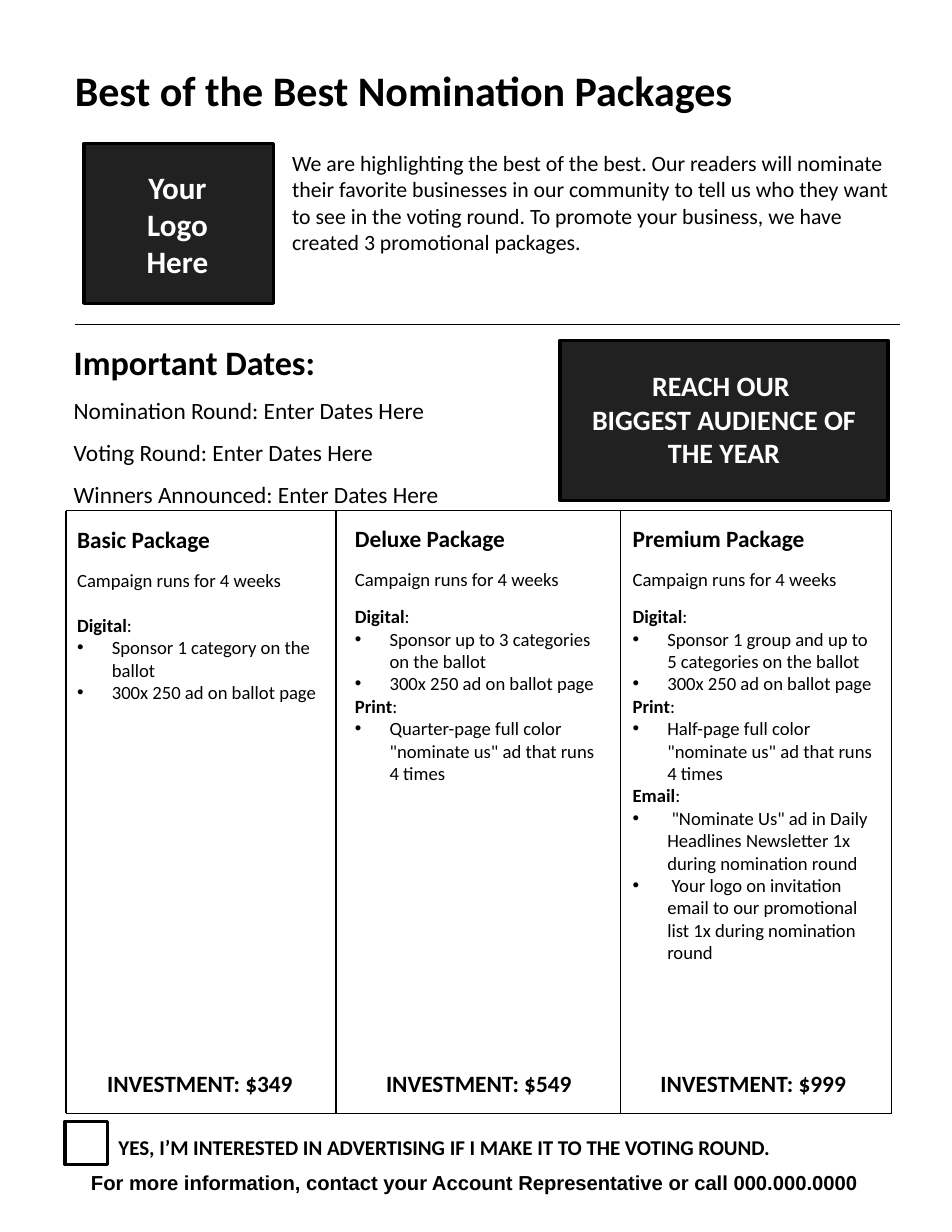
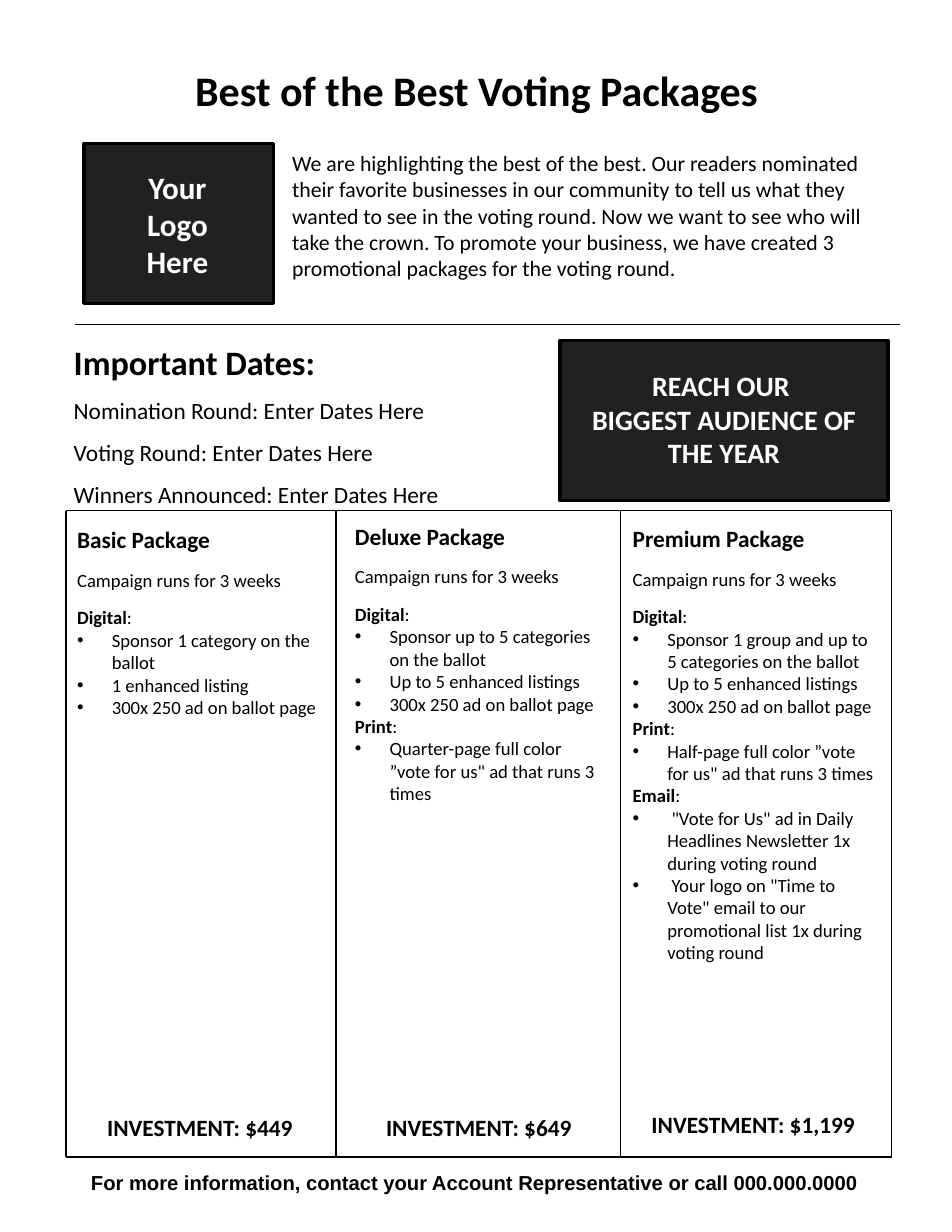
from dataclasses import dataclass

from lxml.etree import SubElement
from pptx import Presentation
from pptx.dml.color import RGBColor
from pptx.enum.shapes import MSO_CONNECTOR, MSO_SHAPE
from pptx.enum.text import MSO_ANCHOR, PP_ALIGN
from pptx.oxml.ns import qn
from pptx.util import Inches, Pt

BLACK, WHITE, CHARCOAL = "000000", "FFFFFF", "212121"
BODY_FONT, FOOTER_FONT = "Calibri", "Arial"
INSET = 0.1
BULLET_INDENT = 0.31
GRID_TOP, GRID_LEFT, GRID_RIGHT = 4.56, 0.59, 7.96
COLUMN_EDGES = (GRID_LEFT, 3, 5.54, GRID_RIGHT)
PACKAGE_STEP, PACKAGE_WIDTH = 2.48, 2.41
PRICE_SPANS = ((0.56, 2.45), (3, 2.55), (5.52, 2.41))
DATES = ("Nomination Round: Enter Dates Here",
         "Voting Round: Enter Dates Here",
         "Winners Announced: Enter Dates Here")


@dataclass(frozen=True)
class Style:
    size: float
    bold: bool = False
    color: str = BLACK
    font: str = BODY_FONT
    align: PP_ALIGN = PP_ALIGN.LEFT
    spacing: float = 1.0


TITLE = Style(27, True)
CENTERED_TITLE = Style(27, True, align=PP_ALIGN.CENTER)
INTRO = Style(14)
DATES_HEADING = Style(22, True)
DATE = Style(15, spacing=1.5)
LOGO = Style(20, True, WHITE, align=PP_ALIGN.CENTER)
CALLOUT = Style(18, True, WHITE, align=PP_ALIGN.CENTER)
FOOTER = Style(13, True, font=FOOTER_FONT, align=PP_ALIGN.CENTER)
INTEREST = Style(13.5, True)
PACKAGE_NAME = Style(15, True)
DETAIL = Style(12)
PRICE = Style(15, True, align=PP_ALIGN.CENTER)


@dataclass(frozen=True)
class Section:
    channel: str
    offers: tuple[str, ...]


@dataclass(frozen=True)
class Package:
    name: str
    price: str
    top: float
    price_top: float
    sections: tuple[Section, ...]
    section_gap: float = 9.8


@dataclass(frozen=True)
class Flyer:
    title: str
    title_style: Style
    intro: str
    duration: str
    grid_bottom: float
    packages: tuple[Package, ...]
    has_checkbox: bool = False


NOMINATION = Flyer(
    "Best of the Best Nomination Packages", TITLE,
    "We are highlighting the best of the best. Our readers will nominate their "
    "favorite businesses in our community to tell us who they want to see in the "
    "voting round. To promote your business, we have created 3 promotional packages.",
    "Campaign runs for 4 weeks", 9.94,
    (
        Package("Basic Package", "$349", 4.59, 9.45, (
            Section("Digital", ("Sponsor 1 category on the ballot",
                                "300x 250 ad on ballot page")),
        ), section_gap=14.6),
        Package("Deluxe Package", "$549", 4.58, 9.45, (
            Section("Digital", ("Sponsor up to 3 categories on the ballot",
                                "300x 250 ad on ballot page")),
            Section("Print", ('Quarter-page full color "nominate us" ad that runs 4 times',)),
        )),
        Package("Premium Package", "$999", 4.58, 9.45, (
            Section("Digital", ("Sponsor 1 group and up to 5 categories on the ballot",
                                "300x 250 ad on ballot page")),
            Section("Print", ('Half-page full color "nominate us" ad that runs 4 times',)),
            Section("Email", (
                ' "Nominate Us" ad in Daily Headlines Newsletter 1x during nomination round',
                " Your logo on invitation email to our promotional list 1x during "
                "nomination round")),
        )),
    ),
    has_checkbox=True,
)

VOTING = Flyer(
    "Best of the Best Voting Packages", CENTERED_TITLE,
    "We are highlighting the best of the best. Our readers nominated their favorite "
    "businesses in our community to tell us what they wanted to see in the voting "
    "round. Now we want to see who will take the crown. To promote your business, we "
    "have created 3 promotional packages for the voting round.",
    "Campaign runs for 3 weeks", 10.33,
    (
        Package("Basic Package", "$449", 4.59, 9.84, (
            Section("Digital", ("Sponsor 1 category on the ballot",
                                "1 enhanced listing",
                                "300x 250 ad on ballot page")),
        )),
        Package("Deluxe Package", "$649", 4.56, 9.84, (
            Section("Digital", ("Sponsor up to 5 categories on the ballot",
                                "Up to 5 enhanced listings",
                                "300x 250 ad on ballot page")),
            Section("Print", ('Quarter-page full color ”vote for us" ad that runs 3 times',)),
        )),
        Package("Premium Package", "$1,199", 4.58, 9.81, (
            Section("Digital", ("Sponsor 1 group and up to 5 categories on the ballot",
                                "Up to 5 enhanced listings",
                                "300x 250 ad on ballot page")),
            Section("Print", ('Half-page full color ”vote for us" ad that runs 3 times',)),
            Section("Email", (
                ' "Vote for Us" ad in Daily Headlines Newsletter 1x during voting round',
                ' Your logo on "Time to Vote" email to our promotional list 1x during '
                "voting round")),
        )),
    ),
)


def rgb(color: str) -> RGBColor:
    return RGBColor.from_string(color)


def add_box(page, left: float, top: float, width: float, height: float,
            anchor=MSO_ANCHOR.TOP):
    """Add an empty wrapping text box and return its text frame."""
    box = page.shapes.add_textbox(Inches(left), Inches(top), Inches(width), Inches(height))
    frame = box.text_frame
    frame.word_wrap = True
    frame.vertical_anchor = anchor
    frame.margin_left = frame.margin_right = Inches(INSET)
    frame.margin_top = frame.margin_bottom = Inches(INSET)
    return frame


def add_bullet(para) -> None:
    properties = para._p.get_or_add_pPr()
    properties.set("marL", str(Inches(BULLET_INDENT)))
    properties.set("indent", str(-Inches(BULLET_INDENT)))
    color = SubElement(properties, qn("a:buClr"))
    SubElement(color, qn("a:srgbClr"), val=BLACK)
    SubElement(properties, qn("a:buFont"), typeface=FOOTER_FONT)
    SubElement(properties, qn("a:buChar"), char="•")


def add_paragraph(frame, text: str, style: Style, before: float = 0,
                  bullet: bool = False):
    """Fill the frame's empty first paragraph, or append a new one."""
    first = frame.paragraphs[0]
    para = first if not first.runs else frame.add_paragraph()
    para.add_run().text = text
    if bullet:
        add_bullet(para)
    para.alignment = style.align
    para.line_spacing = style.spacing
    if before:
        para.space_before = Pt(before)
    para.font.size = Pt(style.size)
    para.font.bold = style.bold
    para.font.name = style.font
    para.font.color.rgb = rgb(style.color)
    return para


def add_text(page, left: float, top: float, width: float, height: float,
             style: Style, *lines: str, anchor=MSO_ANCHOR.TOP):
    frame = add_box(page, left, top, width, height, anchor)
    for line in lines:
        add_paragraph(frame, line, style)
    return frame


def add_panel(page, left: float, top: float, width: float, height: float,
              fill: str = CHARCOAL) -> None:
    panel = page.shapes.add_shape(MSO_SHAPE.RECTANGLE, Inches(left), Inches(top),
                                  Inches(width), Inches(height))
    panel.shadow.inherit = False
    panel.fill.solid()
    panel.fill.fore_color.rgb = rgb(fill)
    panel.line.color.rgb = rgb(BLACK)
    panel.line.width = Pt(2)


def add_rule(page, x1: float, y1: float, x2: float, y2: float) -> None:
    rule = page.shapes.add_connector(MSO_CONNECTOR.STRAIGHT, Inches(x1), Inches(y1),
                                     Inches(x2), Inches(y2))
    rule.line.color.rgb = rgb(BLACK)
    rule.line.width = Pt(0.75)
    SubElement(rule._element.spPr, qn("a:effectLst"))


def draw_header(page, flyer: Flyer) -> None:
    add_text(page, 0.57, 0.48, 7.37, 0.67, flyer.title_style, flyer.title)
    add_text(page, 2.51, 1.24, 5.65, 1.34, INTRO, flyer.intro)
    add_panel(page, 0.75, 1.28, 1.69, 1.43)
    add_text(page, 0.67, 1.28, 1.83, 1.44, LOGO, "Your", "Logo", "Here",
             anchor=MSO_ANCHOR.MIDDLE)
    add_rule(page, 0.67, 2.9, 8.04, 2.9)


def draw_dates(page) -> None:
    dates = add_text(page, 0.56, 2.95, 5.35, 1.52, DATES_HEADING, "Important Dates:")
    for date in DATES:
        add_paragraph(dates, date, DATE)
    add_panel(page, 5, 3.04, 2.93, 1.43)
    add_text(page, 5, 3.19, 2.93, 1.13, CALLOUT, "REACH OUR ",
             "BIGGEST AUDIENCE OF THE YEAR")


def draw_package(page, package: Package, column: int, flyer: Flyer) -> None:
    frame = add_text(page, GRID_LEFT + PACKAGE_STEP * column, package.top, PACKAGE_WIDTH,
                     package.price_top - package.top, PACKAGE_NAME, package.name)
    add_paragraph(frame, flyer.duration, DETAIL, before=9.8)
    for index, section in enumerate(package.sections):
        heading = add_paragraph(frame, section.channel, DETAIL,
                                before=0 if index else package.section_gap)
        heading.runs[0].font.bold = True
        heading.add_run().text = ":"
        for offer in section.offers:
            add_paragraph(frame, offer, DETAIL, bullet=True)
    left, width = PRICE_SPANS[column]
    add_text(page, left, package.price_top, width, 0.47, PRICE,
             f"INVESTMENT: {package.price}")


def draw_packages(page, flyer: Flyer) -> None:
    for y in (GRID_TOP, flyer.grid_bottom):
        add_rule(page, GRID_LEFT, y, GRID_RIGHT, y)
    for x in COLUMN_EDGES:
        add_rule(page, x, GRID_TOP, x, flyer.grid_bottom)
    for column, package in enumerate(flyer.packages):
        draw_package(page, package, column, flyer)


def draw_footer(page, flyer: Flyer) -> None:
    add_text(page, 0.57, 10.35, 7.37, 0.4, FOOTER,
             "For more information, contact your Account Representative "
             "or call 000.000.0000 ")
    if flyer.has_checkbox:
        add_text(page, 0.96, 10.03, 7.37, 0.4, INTEREST,
                 "YES, I’M INTERESTED IN ADVERTISING IF I MAKE IT TO THE VOTING ROUND.")
        add_panel(page, 0.58, 10.01, 0.38, 0.39, WHITE)


def main() -> None:
    deck = Presentation()
    deck.slide_width, deck.slide_height = Inches(8.5), Inches(11)
    for flyer in (NOMINATION, VOTING):
        page = deck.slides.add_slide(deck.slide_layouts[6])
        draw_header(page, flyer)
        draw_dates(page)
        draw_packages(page, flyer)
        draw_footer(page, flyer)
    deck.save("out.pptx")


if __name__ == "__main__":
    main()
